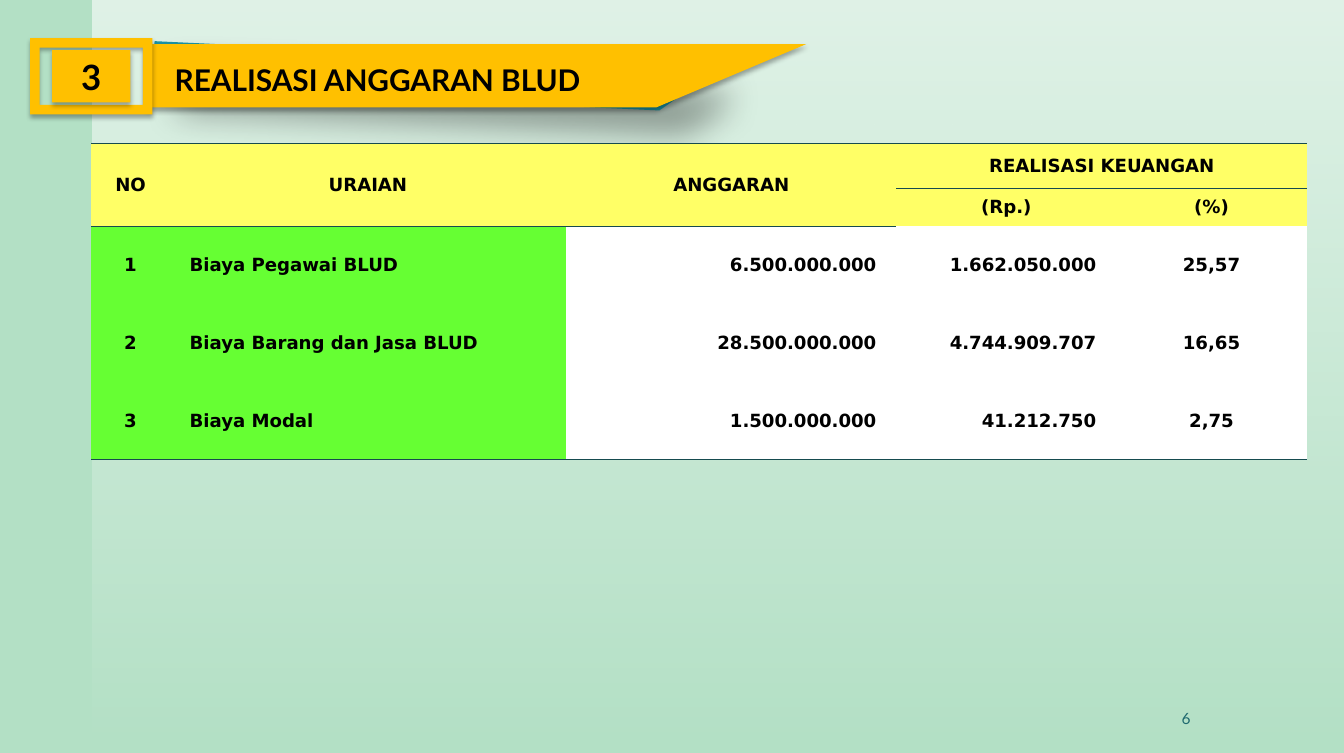
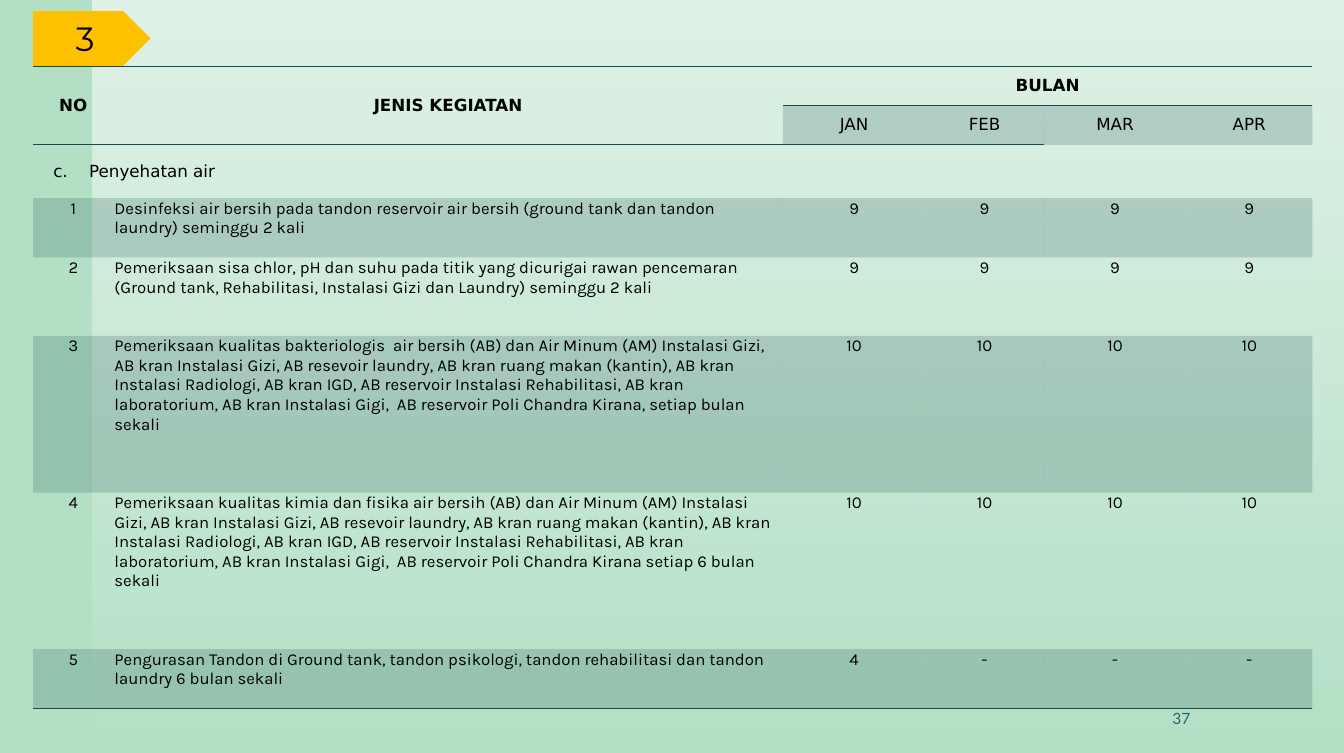
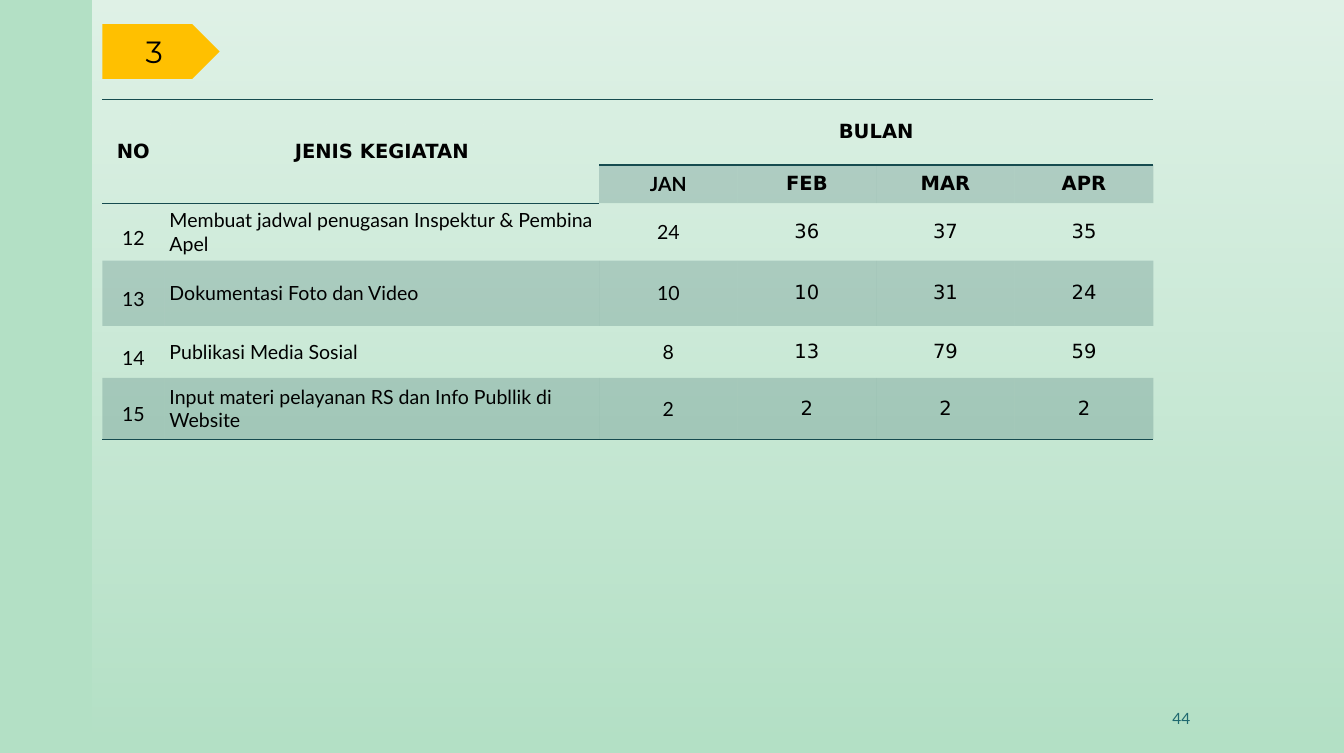
from lxml import etree
from pptx import Presentation
from pptx.dml.color import RGBColor
from pptx.enum.shapes import MSO_SHAPE
from pptx.enum.text import MSO_ANCHOR, PP_ALIGN
from pptx.oxml.ns import qn
from pptx.util import Pt

RECT, FRAME, PENTAGON = MSO_SHAPE.RECTANGLE, MSO_SHAPE.FRAME, MSO_SHAPE.PENTAGON
LEFT, CENTER, RIGHT = PP_ALIGN.LEFT, PP_ALIGN.CENTER, PP_ALIGN.RIGHT
TOP, MIDDLE = MSO_ANCHOR.TOP, MSO_ANCHOR.MIDDLE

COLORS = {
    "mint": "B3E0C5", "white": "FFFFFF", "black": "000000", "gold": "FFC000",
    "teal": "1B91A1", "number": "1F696F", "rule": "164B4F",
    "yellow": "FFFF66", "green": "66FF33",
}
DEJAVU, KARLA, LATO, MONTSERRAT = "DejaVu Sans", "Karla", "Lato", "Montserrat"
PLAIN_TABLE = "{2D5ABB26-0587-4C30-8999-92F81FD0307C}"
SOFT_SHADOW = (32, 3.5, 2.2, 90)
DEEP_SHADOW = (35, 25, 25, 45)


def rgb(name):
    return RGBColor.from_string(COLORS[name])


def child(parent, tag, **attrs):
    return etree.SubElement(parent, qn(tag), {k: str(v) for k, v in attrs.items()})


def set_alpha(color_el, percent):
    child(color_el, "a:alpha", val=percent * 1000)


def write(tf, text, size=12, font=LATO, color="black", bold=False, align=LEFT,
          spacing=None, hanging=None):
    p = tf.paragraphs[0]
    p.alignment = align
    if spacing:
        p.line_spacing = spacing
    if hanging:
        pPr = p._p.get_or_add_pPr()
        pPr.set("marL", str(Pt(hanging)))
        pPr.set("indent", str(-Pt(hanging)))
    r = p.add_run()
    r.text = text
    r.font.size, r.font.name, r.font.bold = Pt(size), font, bold
    r.font.color.rgb = rgb(color)


def add_text(s, x, y, w, h, text, inset=7.2, **fmt):
    tf = s.shapes.add_textbox(Pt(x), Pt(y), Pt(w), Pt(h)).text_frame
    tf.word_wrap = True
    tf.vertical_anchor = MIDDLE
    tf.margin_left = Pt(inset)
    write(tf, text, **fmt)


def paint(shape, color, shadow=None):
    """Fill without outline; shadow is (opacity %, blur, distance, degrees)."""
    shape.fill.solid()
    shape.fill.fore_color.rgb = rgb(color)
    shape.line.fill.background()
    shape.shadow.inherit = False
    if shadow:
        opacity, blur, distance, angle = shadow
        effects = shape._element.spPr.find(qn("a:effectLst"))
        outer = child(effects, "a:outerShdw", blurRad=Pt(blur), dist=Pt(distance),
                      dir=angle * 60000, algn="ctr", rotWithShape=0)
        set_alpha(child(outer, "a:srgbClr", val=COLORS["black"]), opacity)


def add_block(s, kind, x, y, w, h, color="gold", shadow=None, text=None, **fmt):
    shape = s.shapes.add_shape(kind, Pt(x), Pt(y), Pt(w), Pt(h))
    paint(shape, color, shadow)
    if text:
        shape.text_frame.vertical_anchor = MIDDLE
        write(shape.text_frame, text, align=CENTER, **fmt)
    return shape


def add_outline(s, x, y, points, color, shadow):
    corners = [(Pt(x + dx), Pt(y + dy)) for dx, dy in points]
    builder = s.shapes.build_freeform(*corners[0])
    builder.add_line_segments(corners[1:], close=True)
    paint(builder.convert_to_shape(), color, shadow)


def new_slide(prs, number):
    """Slide with the shared background, pale panel and page number."""
    s = prs.slides.add_slide(prs.slide_layouts[6])
    s.background.fill.solid()
    s.background.fill.fore_color.rgb = rgb("mint")
    panel = add_block(s, RECT, 66.2, 0, 897.9, 540, "white")
    panel.fill.gradient()
    panel.fill.gradient_angle = 270
    for stop, position in zip(panel.fill.gradient_stops, (0, 1)):
        stop.position = position
        stop.color.rgb = rgb("white")
    stops = panel._element.spPr.find(qn("a:gradFill")).iter(qn("a:srgbClr"))
    for color_el, opacity in zip(stops, (60, 0)):
        set_alpha(color_el, opacity)
    add_text(s, 636.5, 500.4, 224.6, 28.8, number, size=11.1, color="number", align=RIGHT)
    return s


def add_banner(s, x, y, number, title):
    add_outline(s, x, y, [(89.3, 2.1), (482.4, 20.8), (482.4, 30.2), (451.4, 51.8),
                          (87.8, 35.2)], "teal", DEEP_SHADOW)
    add_outline(s, x, y, [(82.8, 4.3), (556.6, 4.3), (449.3, 49.6), (82.8, 49.6)],
                "gold", SOFT_SHADOW)
    add_block(s, FRAME, x, y, 87.8, 54.7, shadow=SOFT_SHADOW)
    add_block(s, RECT, x + 15.8, y + 8.6, 56.2, 37.4, shadow=SOFT_SHADOW,
              text=number, size=25, bold=True)
    add_text(s, x + 103.7, y + 12.9, 361.4, 33.1, title, inset=0, size=21.4, bold=True)


def add_tag(s, x, y, number, size):
    add_block(s, PENTAGON, x, y, 84.2, 39.2, text=number, size=size, font=MONTSERRAT)


def set_borders(cell, tags):
    tcPr = cell._tc.get_or_add_tcPr()
    for i, tag in enumerate(tags):
        ln = etree.Element(qn(tag), {"w": str(Pt(1))})
        child(child(ln, "a:solidFill"), "a:srgbClr", val=COLORS["rule"])
        tcPr.insert(i, ln)


def fill_cell(cell, color, opacity=100):
    if not color:
        cell.fill.background()
        return
    cell.fill.solid()
    cell.fill.fore_color.rgb = rgb(color)
    if opacity < 100:
        set_alpha(next(cell._tc.tcPr.iter(qn("a:srgbClr"))), opacity)


def add_grid(s, x, y, cols, rows, data, merges, look):
    """Table; merges are (row, column, height, width), look(row, column) gives
    (fill arguments, margins as left/right and top/bottom, anchor, text format)."""
    table = s.shapes.add_table(len(rows), len(cols), Pt(x), Pt(y),
                               Pt(sum(cols)), Pt(sum(rows))).table
    table.first_row = table.horz_banding = False
    table._tbl.tblPr.find(qn("a:tableStyleId")).text = PLAIN_TABLE
    for column, width in zip(table.columns, cols):
        column.width = Pt(width)
    for row, height in zip(table.rows, rows):
        row.height = Pt(height)
    for r, c, height, width in merges:
        table.cell(r, c).merge(table.cell(r + height - 1, c + width - 1))
    for r, line in enumerate(data):
        for c, text in enumerate(line):
            cell = table.cell(r, c)
            if cell.is_spanned:
                continue
            fill, (side, edge), anchor, fmt = look(r, c)
            cell.margin_left = cell.margin_right = Pt(side)
            cell.margin_top = cell.margin_bottom = Pt(edge)
            cell.vertical_anchor = anchor
            fill_cell(cell, *fill)
            if text:
                write(cell.text_frame, text, **fmt)
            if r == 0:
                set_borders(cell, ("a:lnT", "a:lnB"))
            elif r == len(rows) - 1:
                set_borders(cell, ("a:lnB",))


def band(r):
    return ("rule", 20) if r % 2 else (None,)


def budget_look(r, c):
    fill = "yellow" if r < 2 else "green" if c < 2 else "white"
    align = CENTER if r < 2 else (CENTER, LEFT, RIGHT, RIGHT, CENTER)[c]
    return (fill,), (14.4, 5), MIDDLE, dict(size=13, font=DEJAVU, bold=True, align=align)


def water_look(r, c):
    if r < 3:
        fmt = dict(font=DEJAVU, bold=r == 0, align=CENTER)
        if r == 2:
            fmt.update(align=LEFT, hanging=25.8)
        return band(r), (14.4, 5.8), MIDDLE, fmt
    return band(r), (0.7, 0.5), TOP, dict(font=KARLA, align=LEFT if c == 1 else CENTER)


def media_look(r, c):
    fmt = dict(size=14, font=LATO if r and c < 3 else DEJAVU, bold=r < 2,
               align=LEFT if r > 1 and c == 1 else CENTER)
    if r > 1 and c == 0:
        fmt["spacing"] = 1.5
    return band(r), (3.6, 3.6), MIDDLE, fmt


def month_header():
    return [["NO", "JENIS KEGIATAN", "BULAN", "", "", ""],
            ["", "", "JAN", "FEB", "MAR", "APR"]]


MONTH_MERGES = [(0, 0, 2, 1), (0, 1, 2, 1), (0, 2, 1, 4)]
BUDGET = [
    ["NO", "URAIAN", "ANGGARAN", "REALISASI KEUANGAN", ""],
    ["", "", "", "(Rp.)", "(%)"],
    ["1", "Biaya Pegawai BLUD", "6.500.000.000", "1.662.050.000", "25,57"],
    ["2", "Biaya Barang dan Jasa BLUD", "28.500.000.000", "4.744.909.707", "16,65"],
    ["3", "Biaya Modal", "1.500.000.000", "41.212.750", "2,75"],
]
TAPS = ("air bersih (AB) dan Air Minum (AM) Instalasi Gizi, AB kran Instalasi Gizi, "
        "AB resevoir laundry, AB kran ruang makan (kantin), AB kran Instalasi Radiologi, "
        "AB kran IGD, AB reservoir Instalasi Rehabilitasi, AB kran laboratorium, "
        "AB kran Instalasi Gigi,  AB reservoir Poli Chandra Kirana")
WATER = month_header() + [
    ["c.\tPenyehatan air", "", "", "", "", ""],
    ["1", "Desinfeksi air bersih pada tandon reservoir air bersih (ground tank dan tandon "
          "laundry) seminggu 2 kali", *["9"] * 4],
    ["2", "Pemeriksaan sisa chlor, pH dan suhu pada titik yang dicurigai rawan pencemaran "
          "(Ground tank, Rehabilitasi, Instalasi Gizi dan Laundry) seminggu 2 kali", *["9"] * 4],
    ["3", f"Pemeriksaan kualitas bakteriologis  {TAPS}, setiap bulan sekali", *["10"] * 4],
    ["4", f"Pemeriksaan kualitas kimia dan fisika {TAPS} setiap 6 bulan sekali", *["10"] * 4],
    ["5", "Pengurasan Tandon di Ground tank, tandon psikologi, tandon rehabilitasi dan tandon "
          "laundry 6 bulan sekali", "4", "-", "-", "-"],
]
MEDIA = month_header() + [
    ["12", "Membuat jadwal penugasan Inspektur & Pembina Apel", "24", "36", "37", "35"],
    ["13", "Dokumentasi Foto dan Video", "10", "10", "31", "24"],
    ["14", "Publikasi Media Sosial", "8", "13", "79", "59"],
    ["15", "Input materi pelayanan RS dan Info Publlik di Website", "2", "2", "2", "2"],
]


def budget_slide(prs):
    s = new_slide(prs, "6")
    add_banner(s, 21.6, 27.4, "3", "REALISASI ANGGARAN BLUD")
    add_grid(s, 65.5, 103, [56.2, 284.4, 236.9, 157.7, 136.8], [32.4, 27] + [55.8] * 3,
             BUDGET, [(0, 0, 2, 1), (0, 1, 2, 1), (0, 2, 2, 1), (0, 3, 1, 2)], budget_look)


def water_slide(prs):
    s = new_slide(prs, "37")
    add_tag(s, 23.8, 8, "3", 24.1)
    add_grid(s, 23.8, 47.5, [57.6, 480.2, 102.2, 85, 102.2, 90.4],
             [28.2, 28.2, 38.2, 42.6, 56.2, 112.4, 112.4, 42.6],
             WATER, MONTH_MERGES + [(2, 0, 1, 4)], water_look)


def media_slide(prs):
    s = new_slide(prs, "44")
    add_grid(s, 73.4, 71.3, [44.6, 311.8] + [99.4] * 4,
             [47, 27.4, 41.2, 46.8, 37.4, 43.9], MEDIA, MONTH_MERGES, media_look)
    add_tag(s, 73.4, 17.3, "3", 22)


def main():
    prs = Presentation()
    prs.slide_width, prs.slide_height = Pt(964.1), Pt(540)
    budget_slide(prs)
    water_slide(prs)
    media_slide(prs)
    prs.save("out.pptx")


if __name__ == "__main__":
    main()
